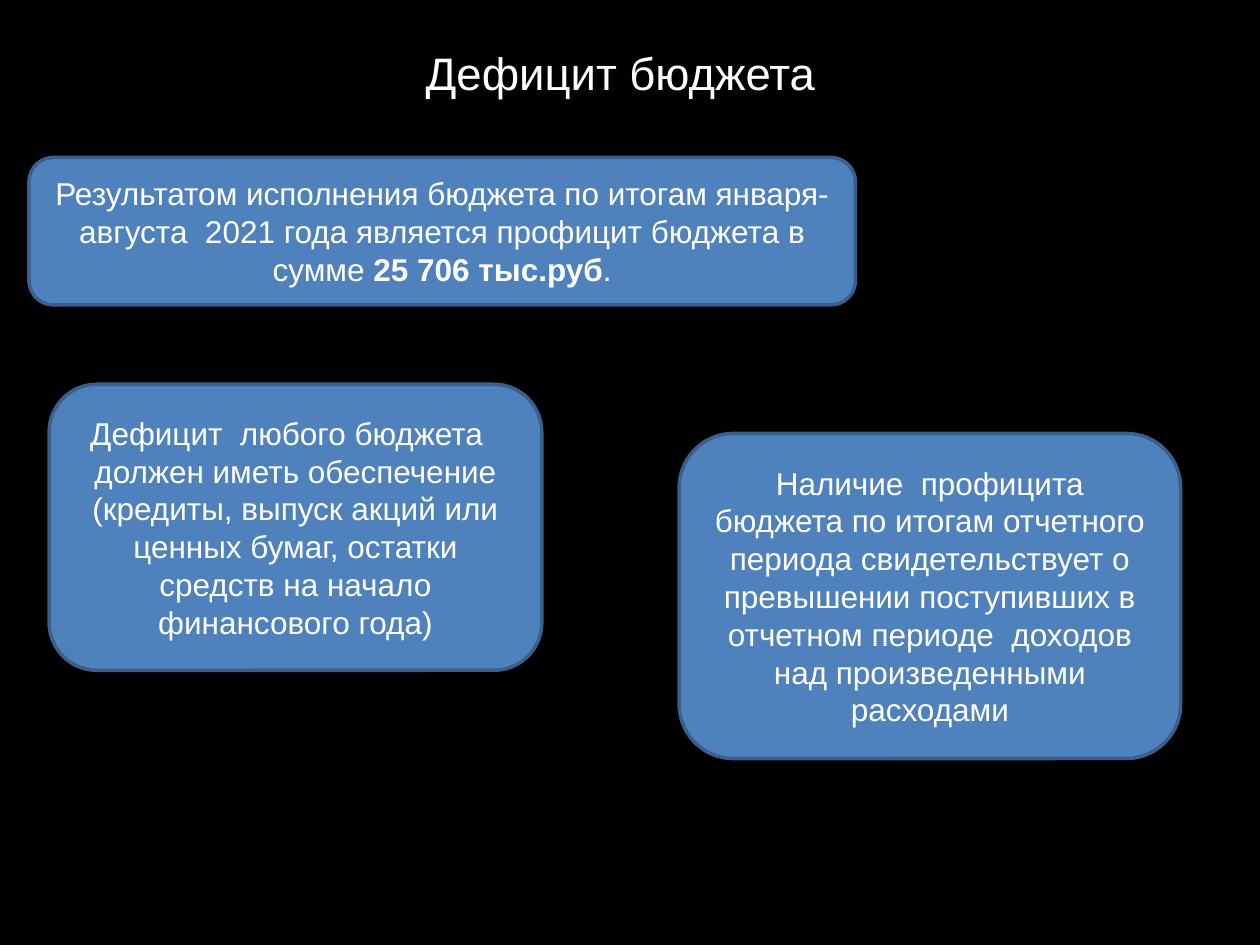
from pptx import Presentation
from pptx.dml.color import RGBColor
from pptx.enum.shapes import MSO_SHAPE
from pptx.enum.text import MSO_ANCHOR, MSO_AUTO_SIZE, PP_ALIGN
from pptx.util import Inches, Pt

ROUNDED = MSO_SHAPE.ROUNDED_RECTANGLE
MIDDLE = MSO_ANCHOR.MIDDLE
GROW = MSO_AUTO_SIZE.SHAPE_TO_FIT_TEXT
CENTER = PP_ALIGN.CENTER

BLACK = RGBColor(0x00, 0x00, 0x00)
WHITE = RGBColor(0xFF, 0xFF, 0xFF)
BLUE = RGBColor(0x4F, 0x81, 0xBD)
DARK_BLUE = RGBColor(0x3A, 0x5F, 0x8C)
FONT = "Arial"

RESULT = [
    ("Результатом исполнения бюджета по итогам января-августа  2021 года "
     "является профицит бюджета в сумме ", False),
    ("25 706 тыс.руб", True),
    (".", False),
]
SURPLUS = [
    ("Наличие  профицита бюджета по итогам отчетного периода свидетельствует "
     "о превышении поступивших в отчетном периоде  доходов над "
     "произведенными расходами", False),
]
DEFICIT = [
    ("Дефицит  любого бюджета   должен иметь обеспечение (кредиты, выпуск "
     "акций или ценных бумаг, остатки средств на начало финансового года)",
     False),
]
CARDS = [
    ((0.23, 1.25, 6.56, 1.17), RESULT),
    ((5.39, 3.44, 3.98, 2.58), SURPLUS),
    ((0.39, 3.05, 3.91, 2.27), DEFICIT),
]


def set_font(p, size):
    p.font.name = FONT
    p.font.size = Pt(size)
    p.font.color.rgb = WHITE


def add_title(s, box, text):
    tf = s.shapes.add_textbox(*map(Inches, box)).text_frame
    tf.word_wrap = True
    tf.auto_size = GROW
    p = tf.paragraphs[0]
    p.text = text
    set_font(p, 26)


def add_card(s, box, runs):
    """Add a rounded card; runs are (text, bold) pairs."""
    sp = s.shapes.add_shape(ROUNDED, *map(Inches, box))
    sp.shadow.inherit = False
    sp.fill.solid()
    sp.fill.fore_color.rgb = BLUE
    sp.line.color.rgb = DARK_BLUE
    sp.line.width = Pt(2)
    tf = sp.text_frame
    tf.word_wrap = True
    tf.vertical_anchor = MIDDLE
    p = tf.paragraphs[0]
    p.alignment = CENTER
    set_font(p, 18)
    for text, bold in runs:
        r = p.add_run()
        r.text = text
        r.font.bold = bold


def main():
    prs = Presentation()
    prs.slide_width, prs.slide_height = Inches(10), Inches(7.5)
    s = prs.slides.add_slide(prs.slide_layouts[6])
    s.background.fill.solid()
    s.background.fill.fore_color.rgb = BLACK
    add_title(s, (3.28, 0.31, 3.91, 0.54), "Дефицит бюджета")
    for box, runs in CARDS:
        add_card(s, box, runs)
    prs.save("out.pptx")


if __name__ == "__main__":
    main()
